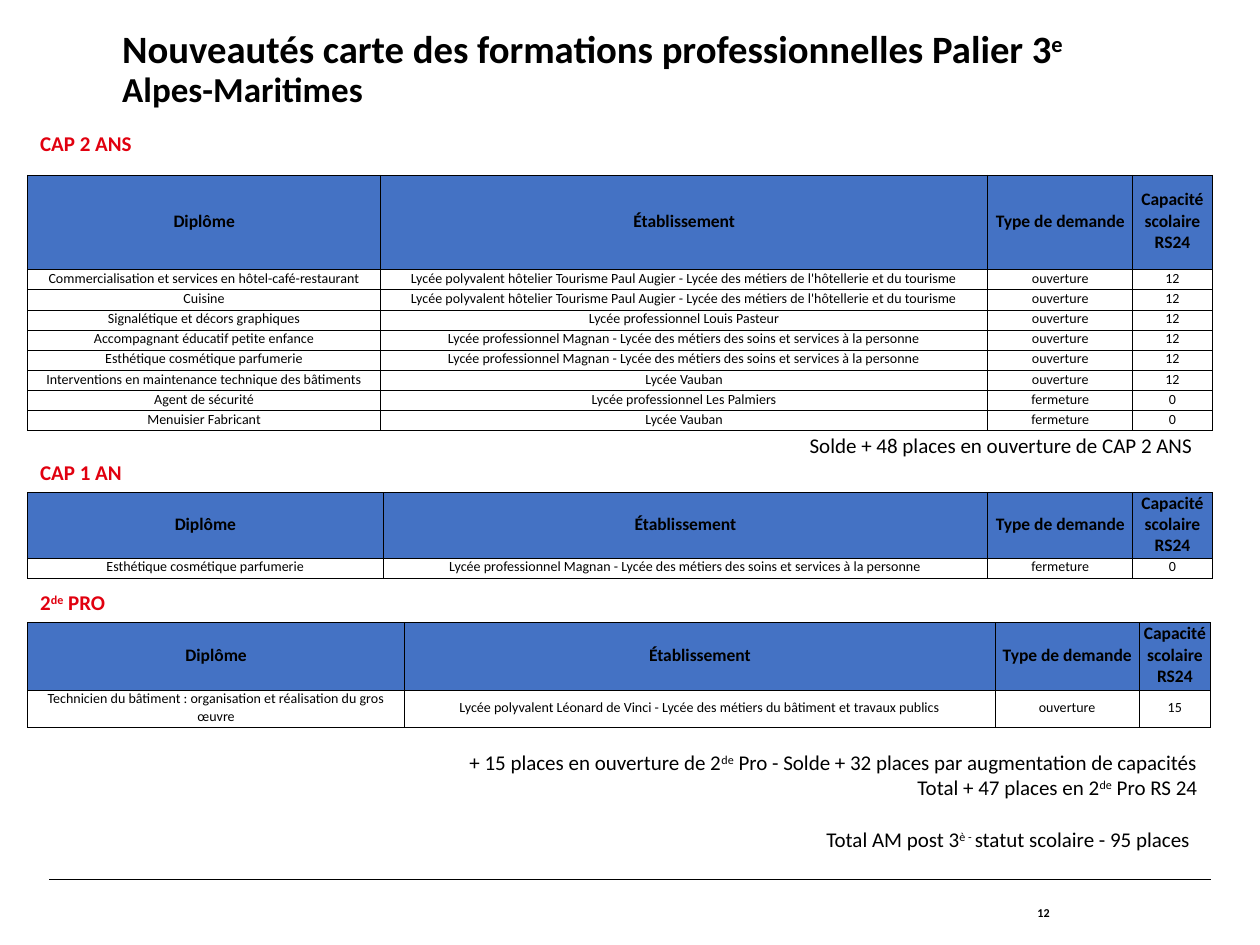
import pptx
import pptx.dml.color
import pptx.enum.text
import pptx.oxml
import pptx.oxml.ns
import pptx.util

Inches = pptx.util.Inches
Pt = pptx.util.Pt
ALIGN = pptx.enum.text.PP_ALIGN
ANCHOR = pptx.enum.text.MSO_ANCHOR

FONT = "Calibri"
BLACK, RED, BLUE = "000000", "E1000F", "4472C4"
LEFT = 0.22

HEAD = ("Diplôme", "Établissement", "Type de demande", "Capacité scolaire RS24")
AUGIER = "Lycée polyvalent hôtelier Tourisme Paul Augier - Lycée des métiers de l'hôtellerie et du tourisme"
MAGNAN = "Lycée professionnel Magnan - Lycée des métiers des soins et services à la personne"
VINCI = "Lycée polyvalent Léonard de Vinci - Lycée des métiers du bâtiment et travaux publics"
BEAUTY = "Esthétique cosmétique parfumerie"
OPEN, CLOSE = "ouverture", "fermeture"

CAP_TWO = [
    ("Commercialisation et services en hôtel-café-restaurant", AUGIER, OPEN, "12"),
    ("Cuisine", AUGIER, OPEN, "12"),
    ("Signalétique et décors graphiques", "Lycée professionnel Louis Pasteur", OPEN, "12"),
    ("Accompagnant éducatif petite enfance", MAGNAN, OPEN, "12"),
    (BEAUTY, MAGNAN, OPEN, "12"),
    ("Interventions en maintenance technique des bâtiments", "Lycée Vauban", OPEN, "12"),
    ("Agent de sécurité", "Lycée professionnel Les Palmiers", CLOSE, "0"),
    ("Menuisier Fabricant", "Lycée Vauban", CLOSE, "0"),
]
CAP_ONE = [(BEAUTY, MAGNAN, CLOSE, "0")]
PRO = [("Technicien du bâtiment : organisation et réalisation du gros œuvre", VINCI, OPEN, "15")]


def rgb(code):
    return pptx.dml.color.RGBColor.from_string(code)


def add_runs(para, parts, size, color=BLACK, bold=False):
    """Add strings as runs; every second one is raised, a newline breaks the line."""
    for i, part in enumerate(parts):
        for j, text in enumerate(part.split("\n")):
            if j:
                para.add_line_break()
            run = para.add_run()
            run.text = text
            font = run.font
            font.name, font.size, font.bold = FONT, Pt(size), bold
            font.color.rgb = rgb(color)
            if i % 2:
                run._r.get_or_add_rPr().set("baseline", "30000")


def set_pads(frame, bottom=0):
    frame.margin_left = frame.margin_right = frame.margin_top = 0
    frame.margin_bottom = Inches(bottom)


def place(shape, x, y, w, h):
    shape.left, shape.top, shape.width, shape.height = map(Inches, (x, y, w, h))


def add_title(slide):
    title = slide.shapes.title
    place(title, 0.97, 0.24, 9.03, 0.79)
    frame = title.text_frame
    frame.auto_size = pptx.enum.text.MSO_AUTO_SIZE.NONE
    frame.vertical_anchor = ANCHOR.TOP
    set_pads(frame)
    lines = [
        (["Nouveautés carte des formations professionnelles Palier 3", "e"], 22.1),
        (["Alpes-Maritimes"], 20),
    ]
    for i, (parts, size) in enumerate(lines):
        para = frame.add_paragraph() if i else frame.paragraphs[0]
        para.alignment = ALIGN.LEFT
        para.line_spacing = 0.9
        add_runs(para, parts, size, bold=True)


def add_text(slide, box, parts, size=12, color=BLACK, bold=False, align=ALIGN.LEFT):
    frame = slide.shapes.add_textbox(*map(Inches, box)).text_frame
    frame.word_wrap = True
    para = frame.paragraphs[0]
    para.alignment = align
    add_runs(para, parts, size, color, bold)
    return frame


def add_label(slide, top, *parts):
    add_text(slide, (LEFT, top, 8.39, 0.3), parts, color=RED, bold=True)


def add_edges(cell):
    props = cell._tc.get_or_add_tcPr()
    for side in "LRTB":
        props.append(pptx.oxml.parse_xml(
            f'<a:ln{side} {pptx.oxml.ns.nsdecls("a")} w="{Pt(0.5)}"><a:solidFill>'
            f'<a:srgbClr val="{BLACK}"/></a:solidFill></a:ln{side}>'))


def fill_cell(cell, text, head):
    add_edges(cell)
    if head:
        cell.fill.solid()
        cell.fill.fore_color.rgb = rgb(BLUE)
    else:
        cell.fill.background()
    set_pads(cell, 0.02)
    cell.vertical_anchor = ANCHOR.MIDDLE
    para = cell.text_frame.paragraphs[0]
    para.alignment = ALIGN.CENTER
    add_runs(para, [text], 10 if head else 8, bold=head)


def add_grid(slide, top, widths, head_high, row_high, rows):
    highs = [head_high] + [row_high] * len(rows)
    frame = slide.shapes.add_table(
        len(highs), len(widths), Inches(LEFT), Inches(top),
        Inches(sum(widths)), Inches(sum(highs)))
    table = frame.table
    table.horz_banding = False
    for col, width in zip(table.columns, widths):
        col.width = Inches(width)
    for i, texts in enumerate([HEAD] + rows):
        table.rows[i].height = Inches(highs[i])
        for j, text in enumerate(texts):
            fill_cell(table.cell(i, j), text, i == 0)


def add_rule(slide):
    line = slide.shapes.add_connector(
        pptx.enum.shapes.MSO_CONNECTOR.STRAIGHT,
        Inches(0.39), Inches(6.98), Inches(9.61), Inches(6.98))
    line.line.color.rgb = rgb(BLACK)
    line.line.width = Pt(0.8)
    line._element.spPr.append(
        pptx.oxml.parse_xml(f'<a:effectLst {pptx.oxml.ns.nsdecls("a")}/>'))


def add_number(slide):
    frame = add_text(slide, (6.85, 6.98, 1.48, 0.52), ["12"], 6.9, bold=True, align=ALIGN.RIGHT)
    frame.vertical_anchor = ANCHOR.MIDDLE
    set_pads(frame)


def main():
    deck = pptx.Presentation()
    deck.slide_width, deck.slide_height = Inches(10), Inches(7.5)
    slide = deck.slides.add_slide(deck.slide_layouts[5])
    add_rule(slide)
    add_number(slide)
    add_title(slide)

    add_label(slide, 0.99, "CAP 2 ANS")
    add_grid(slide, 1.39, (2.8, 4.82, 1.15, 0.63), 0.75, 0.16, CAP_TWO)
    add_text(slide, (6.3, 3.38, 3.3, 0.3),
             ["Solde + 48 places en ouverture de CAP 2 ANS "], align=ALIGN.RIGHT)

    add_label(slide, 3.6, "CAP 1 AN")
    add_grid(slide, 3.91, (2.82, 4.8, 1.15, 0.63), 0.52, 0.16, CAP_ONE)

    add_label(slide, 4.63, "2", "de", " PRO")
    add_grid(slide, 4.94, (2.99, 4.69, 1.14, 0.57), 0.54, 0.29, PRO)
    add_text(slide, (LEFT, 5.9, 9.38, 0.5), [
        "+ 15 places en ouverture de 2", "de",
        " Pro - Solde + 32 places par augmentation de capacités\nTotal + 47 places en 2", "de",
        " Pro RS 24"], align=ALIGN.RIGHT)
    add_text(slide, (6.46, 6.51, 3.16, 0.3),
             ["Total AM post 3", "è - ", "statut scolaire - 95 places"])
    deck.save("out.pptx")


if __name__ == "__main__":
    main()
